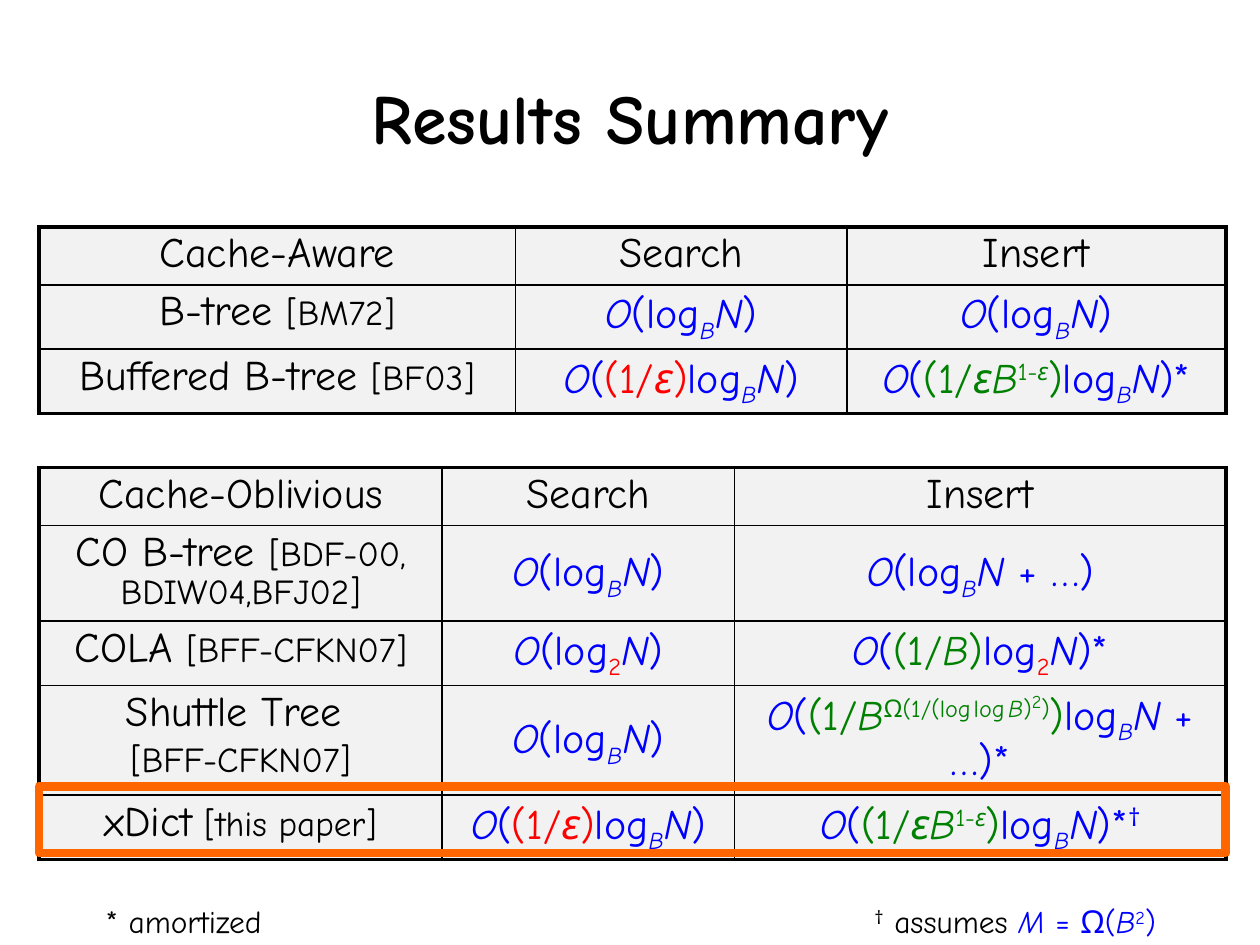
from lxml.etree import SubElement
from pptx import Presentation
from pptx.dml.color import RGBColor
from pptx.enum.shapes import MSO_SHAPE as Shape
from pptx.enum.text import MSO_ANCHOR as Anchor, PP_ALIGN as Align
from pptx.oxml import parse_xml
from pptx.oxml.ns import nsdecls, qn
from pptx.util import Pt

FONT = "Comic Neue"
BLACK, BLUE, RED, GREEN = "000000", "0000FF", "FF0000", "008001"
CELL_FILL, HIGHLIGHT = "F2F2F2", "FF6600"
THIN, THICK = 1, 2.25
SUB, SUP = -25, 30


def run(text, color=BLUE, italic=False, base=0, size=24):
    return text, color, italic, base, size


def var(text, color=BLUE, base=0, size=24):
    return run(text, color, True, base, size)


def name(text, citation=""):
    parts = [run(text, BLACK)]
    if citation:
        parts.append(run(citation, BLACK, size=20))
    return [parts]


def order(*inside, end=")"):
    return [[var("O"), run("("), *inside, run(end)]]


LOG_B = [run("log"), var("B", base=SUB), var("N")]
LOG_2 = [run("log"), run("2", RED, base=SUB), var("N")]
INVERSE_EPS = [run("(1/", RED), var("ε", RED), run(")", RED)]
INVERSE_B = [run("(1/", GREEN), var("B", GREEN), run(")", GREEN)]
INVERSE_EPS_B = [
    run("(1/", GREEN), var("εB", GREEN), run("1-", GREEN, base=SUP),
    var("ε", GREEN, SUP), run(")", GREEN),
]
SHUTTLE_FACTOR = [
    run("(1/", GREEN), var("B", GREEN), run("Ω(1/(log", GREEN, base=SUP),
    run(" ", GREEN, base=SUP, size=8), run("log", GREEN, base=SUP),
    run(" ", GREEN, base=SUP, size=10), var("B", GREEN, SUP),
    run(")", GREEN, base=SUP), run("2", GREEN, base=70, size=18),
    run(")", GREEN, base=SUP), run(")", GREEN),
]
DAGGER = [run("†", base=SUP)]

TABLES = [
    {
        "top": 129.6, "height": 99.4, "name_inset": 0, "centred": set(),
        "columns": [272.2, 189.4, 216.7],
        "row_heights": [26.6, 26.6, 31.7],
        "rows": [
            [name("Cache-Aware"), name("Search"), name("Insert")],
            [name("B-tree ", "[BM72]"), order(*LOG_B), order(*LOG_B)],
            [name("Buffered B-tree ", "[BF03]"),
             order(*INVERSE_EPS, *LOG_B),
             order(*INVERSE_EPS_B, *LOG_B, end=")*")],
        ],
    },
    {
        "top": 267.1, "height": 221, "name_inset": 7.2,
        "centred": {(1, 1), (1, 2), (3, 1)},
        "columns": [230.4, 167, 280.8],
        "row_heights": [29.5, 28.1, 36.7, 45.4, 36.7],
        "rows": [
            [name("Cache-Oblivious"), name("Search"), name("Insert")],
            [name("CO B-tree ", "[BDF-00, BDIW04,BFJ02]"),
             order(*LOG_B), order(*LOG_B, end=" + …)")],
            [name("COLA ", "[BFF-CFKN07]"), order(*LOG_2),
             order(*INVERSE_B, *LOG_2, end=")*")],
            [name("Shuttle Tree ") + [[run("[BFF-CFKN07]", BLACK, size=20)]],
             order(*LOG_B),
             order(*SHUTTLE_FACTOR, *LOG_B, end=" + …)*")],
            [name("xDict", " [this paper]"),
             order(*INVERSE_EPS, *LOG_B),
             [order(*INVERSE_EPS_B, *LOG_B, end=")*")[0] + DAGGER]],
        ],
    },
]

TITLE = [[run("Results Summary", BLACK, size=40)]]
FOOTNOTES = [
    (53.3, 115.2, [[run("* amortized", BLACK, size=18)]]),
    (492.5, 187.9, [[
        run("†", BLACK, base=SUP, size=18), run(" assumes ", BLACK, size=18),
        var("M", size=18), run(" = Ω(", size=18), var("B", size=18),
        run("2", base=SUP, size=18), run(")", size=18),
    ]]),
]
TABLE_LEFT, TABLE_WIDTH = 22.3, 678.2


def rgb(value):
    return RGBColor.from_string(value)


def write(frame, paragraphs, align=Align.LEFT, bold=False):
    for index, parts in enumerate(paragraphs):
        paragraph = frame.add_paragraph() if index else frame.paragraphs[0]
        paragraph.alignment = align
        for text, color, italic, base, size in parts:
            piece = paragraph.add_run()
            piece.text = text
            font = piece.font
            font.name, font.size = FONT, Pt(size)
            font.bold, font.italic = bold, italic
            font.color.rgb = rgb(color)
            if base:
                piece._r.get_or_add_rPr().set("baseline", str(base * 1000))


def set_borders(cell, widths):
    properties = cell._tc.get_or_add_tcPr()
    for index, (side, width) in enumerate(widths.items()):
        properties.insert(index, parse_xml(
            f'<a:ln{side} {nsdecls("a")} w="{int(Pt(width))}"><a:solidFill>'
            f'<a:srgbClr val="{BLACK}"/></a:solidFill></a:ln{side}>'))


def add_results(slide, data):
    rows, columns = data["rows"], data["columns"]
    holder = slide.shapes.add_table(
        len(rows), len(columns), Pt(TABLE_LEFT), Pt(data["top"]),
        Pt(TABLE_WIDTH), Pt(data["height"]))
    table = holder.table
    table.first_row = table.horz_banding = False
    for column, width in zip(table.columns, columns):
        column.width = Pt(width)
    for row, height in zip(table.rows, data["row_heights"]):
        row.height = Pt(height)
    holder.height = Pt(data["height"])
    for r, row in enumerate(rows):
        for c, content in enumerate(row):
            cell = table.cell(r, c)
            cell.fill.solid()
            cell.fill.fore_color.rgb = rgb(CELL_FILL)
            if (r, c) in data["centred"]:
                cell.vertical_anchor = Anchor.MIDDLE
            if c == 0:
                cell.margin_left = cell.margin_right = Pt(data["name_inset"])
            edges = {"L": c == 0, "R": c == len(columns) - 1,
                     "T": r == 0, "B": r == len(rows) - 1}
            set_borders(cell, {side: THICK if outer else THIN
                               for side, outer in edges.items()})
            write(cell.text_frame, content, Align.CENTER)
            for paragraph in cell.text_frame.paragraphs:
                paragraph.line_spacing = 0.9
                paragraph.space_before = Pt(4.8)


def main():
    deck = Presentation()
    deck.slide_width, deck.slide_height = Pt(720), Pt(540)
    slide = deck.slides.add_slide(deck.slide_layouts[6])

    title = slide.shapes.add_textbox(Pt(0), Pt(21.6), Pt(720), Pt(90)).text_frame
    title.word_wrap = True
    title.vertical_anchor = Anchor.MIDDLE
    write(title, TITLE, Align.CENTER, bold=True)

    for data in TABLES:
        add_results(slide, data)

    highlight = slide.shapes.add_shape(
        Shape.RECTANGLE, Pt(TABLE_LEFT), Pt(449.3), Pt(TABLE_WIDTH), Pt(38.2))
    highlight.shadow.inherit = False
    highlight.fill.background()
    highlight.line.color.rgb = rgb(HIGHLIGHT)
    highlight.line.width = Pt(5)
    SubElement(highlight.line._get_or_add_ln(), qn("a:round"))

    for left, width, note in FOOTNOTES:
        frame = slide.shapes.add_textbox(
            Pt(left), Pt(511.9), Pt(width), Pt(28.8)).text_frame
        frame.word_wrap = False
        write(frame, note)

    deck.save("out.pptx")


if __name__ == "__main__":
    main()
